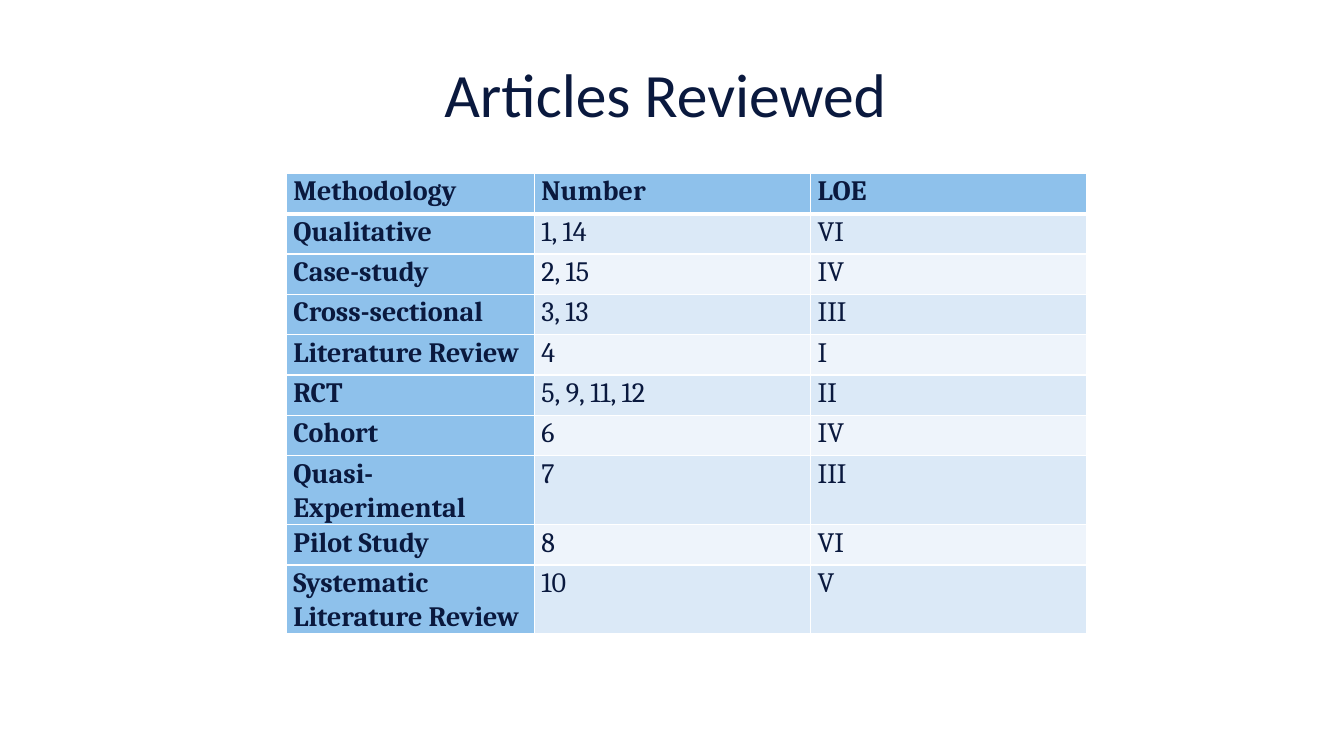
from dataclasses import dataclass

from lxml import etree
from pptx import Presentation
from pptx.dml.color import RGBColor
from pptx.enum import text
from pptx.oxml import ns
from pptx.util import Inches, Pt

NAVY = RGBColor(0x0A, 0x19, 0x3E)
BLUE = RGBColor(0x8E, 0xC1, 0xEB)
BAND_DARK = RGBColor(0xDB, 0xE9, 0xF7)
BAND_LIGHT = RGBColor(0xEE, 0xF4, 0xFB)
WHITE = RGBColor(0xFF, 0xFF, 0xFF)


@dataclass
class Review:
    methodology: str
    number: str
    loe: str
    height: float = 0.4


HEADER = Review("Methodology", "Number", "LOE")
REVIEWS = [
    Review("Qualitative", "1, 14", "VI"),
    Review("Case-study", "2, 15", "IV"),
    Review("Cross-sectional", "3, 13", "III"),
    Review("Literature Review", "4", "I"),
    Review("RCT", "5, 9, 11, 12", "II"),
    Review("Cohort", "6", "IV"),
    Review("Quasi-Experimental", "7", "III"),
    Review("Pilot Study", "8", "VI"),
    Review("Systematic Literature Review", "10", "V", 0.66),
]
COLUMN_WIDTHS = [2.46, 2.74, 2.74]


def add_run(p, content: str, font: str, size: int, bold: bool = False) -> None:
    r = p.add_run()
    r.text = content
    r.font.name = font
    r.font.size = Pt(size)
    r.font.bold = bold
    r.font.color.rgb = NAVY


def set_borders(cell, widths: dict[str, int]) -> None:
    """Draw white cell borders; widths maps side letters to points."""
    tc_pr = cell._tc.get_or_add_tcPr()
    for i, (side, width) in enumerate(widths.items()):
        ln = etree.Element(ns.qn(f"a:ln{side}"), w=str(Pt(width)))
        fill = etree.SubElement(ln, ns.qn("a:solidFill"))
        etree.SubElement(fill, ns.qn("a:srgbClr"), val=str(WHITE))
        tc_pr.insert(i, ln)


def format_cell(cell, content: str, row: int, col: int) -> None:
    heading = row == 0 or col == 0
    cell.margin_left = cell.margin_right = Inches(0.07)
    cell.margin_top = cell.margin_bottom = 0
    cell.fill.solid()
    band = BAND_DARK if row % 2 else BAND_LIGHT
    cell.fill.fore_color.rgb = BLUE if heading else band
    set_borders(cell, {"L": 1, "R": 1, "T": 3 if row == 1 else 1, "B": 3 if row == 0 else 1})
    p = cell.text_frame.paragraphs[0]
    p.line_spacing = 1.07
    add_run(p, content, "Cambria", 20, heading)


def add_title(s) -> None:
    sp = s.shapes.title
    sp.left, sp.top, sp.width, sp.height = (Inches(v) for v in (0.67, 0.3, 12, 1.25))
    tf = sp.text_frame
    tf.vertical_anchor = text.MSO_ANCHOR.MIDDLE
    p = tf.paragraphs[0]
    p.alignment = text.PP_ALIGN.CENTER
    add_run(p, "Articles Reviewed ", "Calibri", 44)


def add_review_table(s) -> None:
    rows = [HEADER, *REVIEWS]
    table = s.shapes.add_table(
        len(rows), len(COLUMN_WIDTHS), Inches(2.84), Inches(1.72),
        Inches(sum(COLUMN_WIDTHS)), Inches(sum(r.height for r in rows)),
    ).table
    table.first_col = True
    for column, width in zip(table.columns, COLUMN_WIDTHS):
        column.width = Inches(width)
    for i, review in enumerate(rows):
        table.rows[i].height = Inches(review.height)
        for j, content in enumerate((review.methodology, review.number, review.loe)):
            format_cell(table.cell(i, j), content, i, j)


def main() -> None:
    prs = Presentation()
    prs.slide_width, prs.slide_height = Inches(13.33), Inches(7.5)
    s = prs.slides.add_slide(prs.slide_layouts[5])
    add_title(s)
    add_review_table(s)
    prs.save("out.pptx")


if __name__ == "__main__":
    main()
